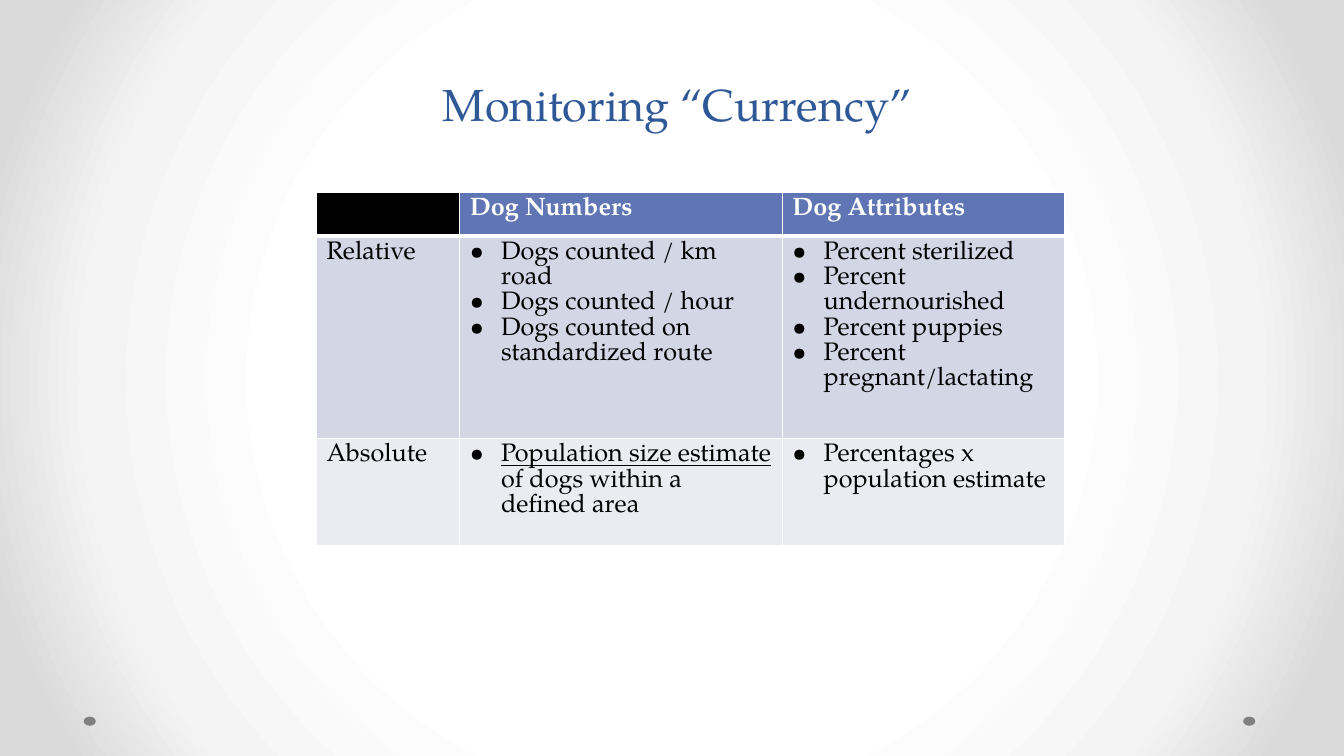
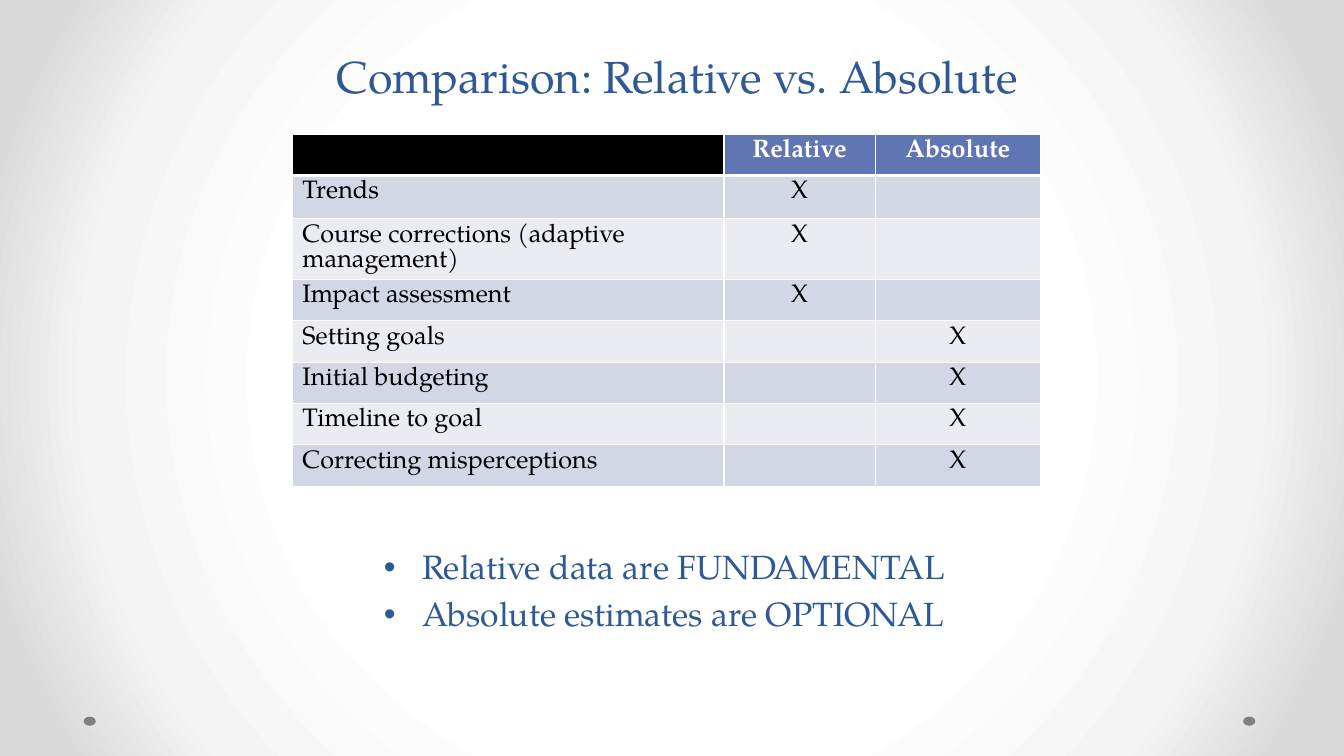
from pptx import Presentation
from pptx.dml.color import RGBColor
from pptx.enum.shapes import MSO_SHAPE
from pptx.enum.text import MSO_ANCHOR, PP_ALIGN
from pptx.oxml import parse_xml
from pptx.oxml.ns import nsdecls, qn
from pptx.util import Inches, Pt

LEFT, CENTER = PP_ALIGN.LEFT, PP_ALIGN.CENTER
BOTTOM = MSO_ANCHOR.BOTTOM
OVAL = MSO_SHAPE.OVAL

TITLE_BLUE = RGBColor(0x2F, 0x58, 0x97)
HEADER_BLUE = RGBColor(0x60, 0x76, 0xB4)
BAND_DARK = RGBColor(0xD2, 0xD6, 0xE5)
BAND_LIGHT = RGBColor(0xEA, 0xEC, 0xF2)
BLACK = RGBColor(0, 0, 0)
WHITE = RGBColor(0xFF, 0xFF, 0xFF)
SOFT_GREY = RGBColor(0xF4, 0xF4, 0xF4)
EDGE_GREY = RGBColor(0xDA, 0xDA, 0xDA)
DOT_GREY = RGBColor(0x80, 0x80, 0x80)

FONT = "TeX Gyre Pagella"
BULLET_FONT = "Arial"
BACKGROUND_STOPS = [(50, WHITE), (76, SOFT_GREY), (92, EDGE_GREY)]

CURRENCY_ROWS = [
    ["", "Dog Numbers", "Dog Attributes"],
    [
        "Relative",
        ["Dogs counted / km road", "Dogs counted / hour",
         "Dogs counted on standardized route"],
        ["Percent sterilized", "Percent undernourished", "Percent puppies",
         "Percent pregnant/lactating"],
    ],
    [
        "Absolute",
        [("Population size estimate", " of dogs within a defined area")],
        ["Percentages x population estimate"],
    ],
]

RELATIVE_USES = ["Trends", "Course corrections (adaptive management)",
                 "Impact assessment"]
ABSOLUTE_USES = ["Setting goals", "Initial budgeting", "Timeline to goal",
                 "Correcting misperceptions"]
COMPARISON_ROWS = (
    [["", "Relative", "Absolute"]]
    + [[use, "X", ""] for use in RELATIVE_USES]
    + [[use, "", "X"] for use in ABSOLUTE_USES]
)
CONCLUSIONS = ["Relative data are FUNDAMENTAL", "Absolute estimates are OPTIONAL"]


def add_span(para, text, size, color, bold=False, underline=False):
    span = para.add_run()
    span.text = text
    span.font.name = FONT
    span.font.size = Pt(size)
    span.font.color.rgb = color
    span.font.bold = bold
    span.font.underline = underline


def add_bullet(para, indent, font):
    properties = para._p.get_or_add_pPr()
    properties.set("marL", str(Inches(indent)))
    properties.set("indent", str(-Inches(indent)))
    properties.append(parse_xml(f'<a:buFont {nsdecls("a")} typeface="{font}"/>'))
    properties.append(parse_xml(f'<a:buChar {nsdecls("a")} char="•"/>'))


def next_para(frame, index):
    return frame.add_paragraph() if index else frame.paragraphs[0]


def set_background(master):
    master.background.fill.solid()
    holder = master.element.find(".//" + qn("p:bgPr"))
    stops = "".join(
        f'<a:gs pos="{place * 1000}"><a:srgbClr val="{color}"/></a:gs>'
        for place, color in BACKGROUND_STOPS)
    gradient = parse_xml(
        f'<a:gradFill {nsdecls("a")} rotWithShape="1"><a:gsLst>{stops}</a:gsLst>'
        '<a:path path="circle"><a:fillToRect l="50000" t="50000" r="50000" b="50000"/>'
        '</a:path></a:gradFill>')
    holder.replace(holder[0], gradient)


def add_master_dots(master, page):
    for number, left in enumerate((0.83, 12.33), start=20):
        dot = page.shapes.add_shape(
            OVAL, Inches(left), Inches(7.11), Inches(0.12), Inches(0.09))
        dot.shadow.inherit = False
        dot.fill.solid()
        dot.fill.fore_color.rgb = DOT_GREY
        dot.line.fill.background()
        dot.name = f"Footer dot {number - 19}"
        dot.element.nvSpPr.cNvPr.id = number
        master.element.cSld.spTree.append(dot.element)


def add_page(deck, title, top):
    page = deck.slides.add_slide(deck.slide_layouts[5])
    box = page.shapes.title
    box.left, box.top = Inches(2.22), Inches(top)
    box.width, box.height = Inches(9), Inches(0.75)
    frame = box.text_frame
    frame.word_wrap = True
    frame.vertical_anchor = BOTTOM
    para = frame.paragraphs[0]
    para.alignment = CENTER
    para.line_spacing = Pt(58)
    add_span(para, title, 32, TITLE_BLUE)
    return page


def set_borders(cell, top_width, bottom_width):
    properties = cell._tc.get_or_add_tcPr()
    widths = {"lnL": 1, "lnR": 1, "lnT": top_width, "lnB": bottom_width}
    for index, (side, width) in enumerate(widths.items()):
        properties.insert(index, parse_xml(
            f'<a:{side} {nsdecls("a")} w="{Pt(width)}"><a:solidFill>'
            f'<a:srgbClr val="{WHITE}"/></a:solidFill></a:{side}>'))


def cell_color(row, column):
    if row == 0:
        return HEADER_BLUE if column else BLACK
    return BAND_DARK if row % 2 else BAND_LIGHT


def fill_cell(cell, content, header, alignment):
    bulleted = isinstance(content, list)
    for index, item in enumerate(content if bulleted else [content]):
        para = next_para(cell.text_frame, index)
        para.alignment = alignment
        if bulleted:
            add_bullet(para, 0.31, FONT)
        spans = item if isinstance(item, tuple) else (item,)
        for position, text in enumerate(spans):
            if text:
                add_span(para, text, 18, WHITE if header else BLACK, header,
                         underline=len(spans) > 1 and position == 0)


def add_grid(page, left, top, widths, heights, rows, mark_alignment):
    table = page.shapes.add_table(
        len(rows), len(widths), Inches(left), Inches(top),
        Inches(sum(widths)), Inches(sum(heights))).table
    table.first_row = table.horz_banding = False
    for column, width in zip(table.columns, widths):
        column.width = Inches(width)
    for line, height in zip(table.rows, heights):
        line.height = Inches(height)
    for row, contents in enumerate(rows):
        for column, content in enumerate(contents):
            cell = table.cell(row, column)
            cell.fill.solid()
            cell.fill.fore_color.rgb = cell_color(row, column)
            set_borders(cell, 3 if row == 1 else 1, 3 if row == 0 else 1)
            fill_cell(cell, content, row == 0, mark_alignment if column else LEFT)


def add_conclusions(page, left, top, width, height):
    box = page.shapes.add_textbox(
        Inches(left), Inches(top), Inches(width), Inches(height))
    frame = box.text_frame
    frame.word_wrap = True
    for index, text in enumerate(CONCLUSIONS):
        para = next_para(frame, index)
        para.space_before = Pt(4.8)
        add_bullet(para, 0.38, BULLET_FONT)
        add_span(para, text, 24, TITLE_BLUE)


def build_currency(deck):
    page = add_page(deck, "Monitoring “Currency”", 0.59)
    add_grid(page, 3.14, 1.91, [1.42, 3.2, 2.8], [0.43, 2.01, 1.06],
             CURRENCY_ROWS, LEFT)
    return page


def build_comparison(deck):
    page = add_page(deck, "Comparison: Relative vs. Absolute", 0.32)
    add_grid(page, 2.9, 1.33, [4.28, 1.5, 1.64], [0.41, 0.43] + [0.41] * 6,
             COMPARISON_ROWS, CENTER)
    add_conclusions(page, 3.71, 5.37, 6.67, 1.08)


def main():
    deck = Presentation()
    deck.slide_width, deck.slide_height = Inches(13.33), Inches(7.5)
    set_background(deck.slide_master)
    first_page = build_currency(deck)
    add_master_dots(deck.slide_master, first_page)
    build_comparison(deck)
    deck.save("out.pptx")


if __name__ == "__main__":
    main()
